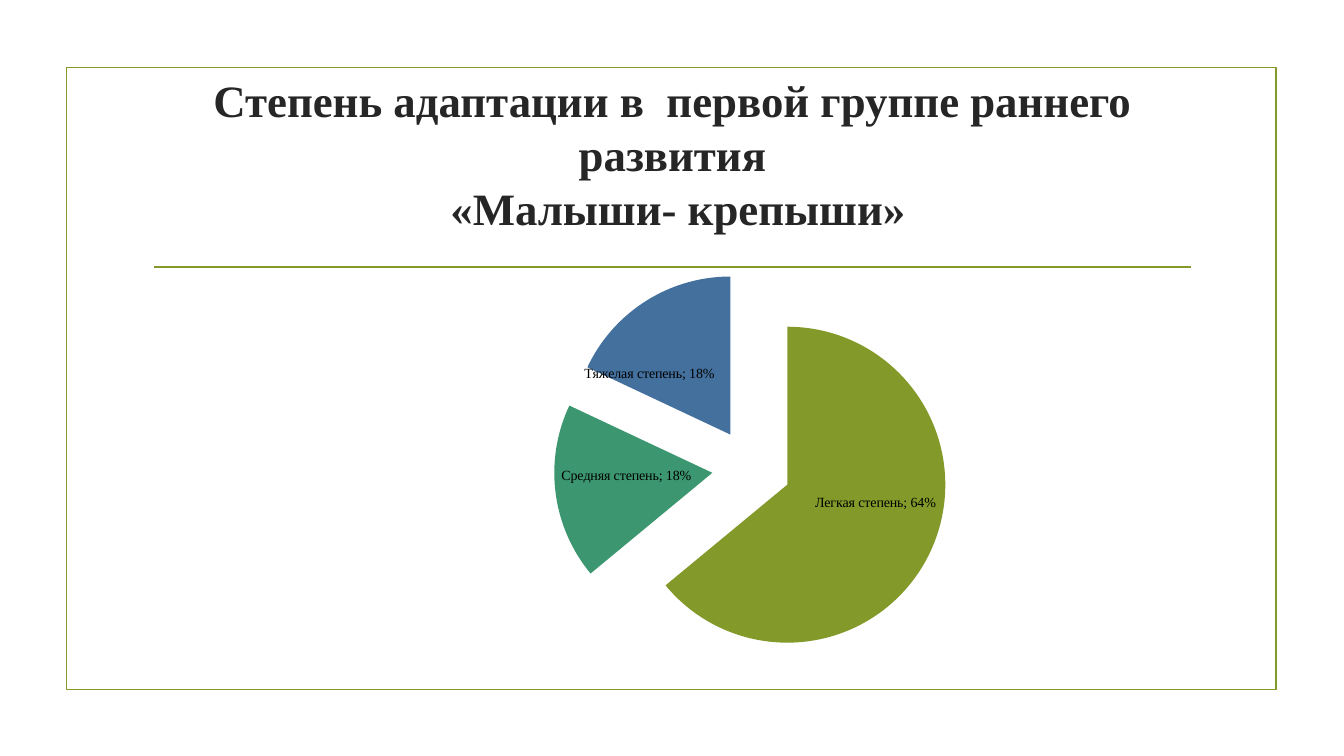
"""Slide with an exploded pie chart of adaptation levels in a nursery group."""
from lxml import etree
from pptx import Presentation
from pptx.chart import data
from pptx.dml.color import RGBColor
from pptx.enum import chart as charts, shapes, text
from pptx.oxml import ns, parse_xml
from pptx.util import Inches, Pt

OLIVE = "83992A"
LEVELS = [
    ("Легкая степень", 0.64, OLIVE, (0.01, -0.09)),
    ("Средняя степень", 0.18, "3C9770", (0, -0.02)),
    ("Тяжелая степень", 0.18, "44709D", (-0.06, 0.14)),
]
PLOT_AREA = {"x": 0.38, "y": 0.05, "w": 0.37, "h": 0.92}


def color(value):
    return RGBColor.from_string(value)


prs = Presentation()
prs.slide_width, prs.slide_height = Inches(13.33), Inches(7.5)
slide = prs.slides.add_slide(prs.slide_layouts[5])

frame = slide.shapes.add_shape(
    shapes.MSO_SHAPE.RECTANGLE, Inches(0.66), Inches(0.67), Inches(12), Inches(6.17))
frame.shadow.inherit = False
frame.fill.background()
divider = slide.shapes.add_connector(
    shapes.MSO_CONNECTOR.STRAIGHT, Inches(1.53), Inches(2.65), Inches(11.81), Inches(2.65))
etree.SubElement(divider._element.spPr, ns.qn("a:effectLst"))
for border in (frame, divider):
    border.line.color.rgb = color(OLIVE)
    border.line.width = Pt(1.25)

title = slide.shapes.title
title.left, title.top = Inches(1.42), Inches(1.07)
title.width, title.height = Inches(10.5), Inches(1.43)
heading = title.text_frame
heading.text = "Степень адаптации в  первой группе раннего развития\v «Малыши- крепыши»"
heading.word_wrap = True
heading.auto_size = text.MSO_AUTO_SIZE.NONE
heading.vertical_anchor = text.MSO_ANCHOR.MIDDLE
heading.margin_bottom = Inches(0.57)
heading.paragraphs[0].alignment = text.PP_ALIGN.CENTER
for run in heading.paragraphs[0].runs:
    run.font.name = "Times New Roman"
    run.font.size = Pt(32)
    run.font.bold = True
    run.font.color.rgb = color("262626")

levels = data.CategoryChartData(number_format="0%")
levels.categories = [level[0] for level in LEVELS]
levels.add_series("Series 1", [level[1] for level in LEVELS])
pie = slide.shapes.add_chart(
    charts.XL_CHART_TYPE.PIE, Inches(1.42), Inches(2.47), Inches(10.68), Inches(4.26),
    levels).chart
pie.has_legend = False
pie.has_title = False
pie.font.name = "Times New Roman"
pie.font.size = Pt(10)
pie.font.color.rgb = color("000000")
pie.plots[0].vary_by_categories = True

shares = pie.plots[0].series[0]
labels = shares.data_labels
labels.show_category_name = True
labels.show_value = True
labels.show_percentage = False
labels.number_format = "0%"
labels.number_format_is_linked = False
labels.position = charts.XL_LABEL_POSITION.INSIDE_END

for index, (name, share, fill, (shift_x, shift_y)) in enumerate(LEVELS):
    slice_fill = shares.points[index].format.fill
    slice_fill.solid()
    slice_fill.fore_color.rgb = color(fill)
    labels._element.insert(index, parse_xml(
        f'<c:dLbl {ns.nsdecls("c")}><c:idx val="{index}"/><c:layout><c:manualLayout>'
        f'<c:x val="{shift_x}"/><c:y val="{shift_y}"/></c:manualLayout></c:layout>'
        '<c:numFmt formatCode="0%" sourceLinked="0"/><c:dLblPos val="inEnd"/>'
        '<c:showLegendKey val="0"/><c:showVal val="1"/><c:showCatName val="1"/>'
        '<c:showSerName val="0"/><c:showPercent val="0"/><c:showBubbleSize val="0"/>'
        '</c:dLbl>'))
explosion = parse_xml(f'<c:explosion {ns.nsdecls("c")} val="25"/>')
shares._element.find(ns.qn("c:dPt")).addprevious(explosion)

plot_area = pie._chartSpace.chart.plotArea
for old_layout in plot_area.findall(ns.qn("c:layout")):
    plot_area.remove(old_layout)
bounds = "".join(f'<c:{side} val="{share}"/>' for side, share in PLOT_AREA.items())
plot_area.insert(0, parse_xml(
    f'<c:layout {ns.nsdecls("c")}><c:manualLayout><c:layoutTarget val="inner"/>'
    f'<c:xMode val="edge"/><c:yMode val="edge"/>{bounds}</c:manualLayout></c:layout>'))

prs.save("out.pptx")
